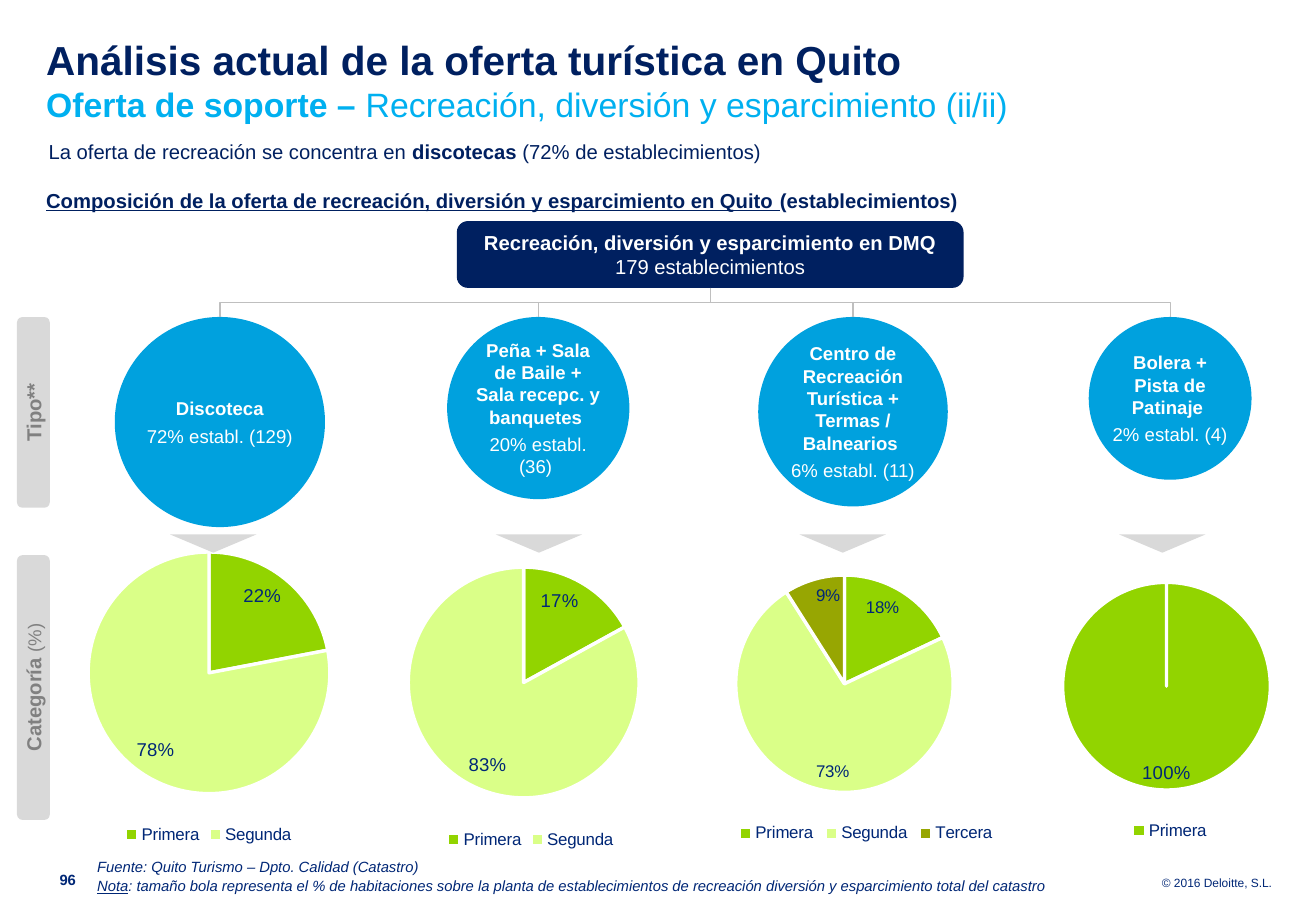
from typing import NamedTuple

from lxml.etree import SubElement
from pptx import Presentation
from pptx.chart.data import CategoryChartData
from pptx.dml.color import RGBColor
from pptx.enum.chart import XL_CHART_TYPE, XL_LABEL_POSITION, XL_LEGEND_POSITION
from pptx.enum.shapes import MSO_CONNECTOR, MSO_SHAPE
from pptx.enum.text import MSO_ANCHOR, PP_ALIGN
from pptx.oxml import parse_xml
from pptx.oxml.ns import nsdecls, qn
from pptx.util import Inches, Pt

NAVY = RGBColor(0x00, 0x20, 0x60)
INK = RGBColor(0x00, 0x27, 0x76)
SKY = RGBColor(0x00, 0xB0, 0xF0)
BALL_BLUE = RGBColor(0x00, 0xA1, 0xDE)
WHITE = RGBColor(0xFF, 0xFF, 0xFF)
PALE_GREY = RGBColor(0xD9, 0xD9, 0xD9)
LINE_GREY = RGBColor(0xBF, 0xBF, 0xBF)
TEXT_GREY = RGBColor(0x80, 0x80, 0x80)
GREENS = [RGBColor(0x92, 0xD4, 0x00), RGBColor(0xDA, 0xFF, 0x88), RGBColor(0x97, 0xA6, 0x02)]
CATEGORIES = ["Primera", "Segunda", "Tercera"]
CELL = Inches(0.1)
BALL_TOP = 26.1
ARROW_TOP = 44


class Box(NamedTuple):
    left: float
    top: float
    width: float
    height: float

    def lengths(self):
        return [round(value * CELL) for value in self]

    def inside(self, left, top, width, height):
        return Box(self.left + left, self.top + top, width, height)


class Offer(NamedTuple):
    chart_box: Box
    ball_center: float
    ball_size: float
    arrow_center: float
    name: str
    share: str
    values: list
    pie: tuple
    label_size: float = 11
    legend: tuple = ()


OFFERS = [
    Offer(Box(1.9, 44, 30.6, 25.9), 16.2, 17.3, 15.65, "Discoteca", "72% establ. (129)",
          [0.22, 0.78], (15.3, 11.4, 19.9)),
    Offer(Box(28.2, 43.6, 31, 26.7), 16.1, 15, 16.15,
          "Peña + Sala de Baile + Sala recepc. y banquetes ", "20% establ. (36) ",
          [0.17, 0.83], (14.9, 12.6, 19)),
    Offer(Box(54.8, 42.6, 30.7, 29.1), 15.4, 15.6, 14.55,
          "Centro de Recreación Turística + Termas / Balnearios ", "6% establ. (11)",
          [0.18, 0.73, 0.09], (14.7, 13.7, 17.9), 10, (5.5, 24.9, 22, 2.2)),
    Offer(Box(81.2, 46, 29.9, 24.3), 15.1, 13.4, 14.45,
          "Bolera + Pista de Patinaje ", "2% establ. (4) ",
          [100], (14.8, 10.5, 17.1), 11, (11.8, 21.4, 6.6, 2)),
]


def apply(target, formats):
    for name, value in formats.items():
        setattr(target, name, value)


def write(frame, paragraphs, style, anchor=MSO_ANCHOR.TOP, **para_format):
    apply(frame, dict(word_wrap=True, vertical_anchor=anchor, margin_left=0,
                      margin_right=0, margin_top=0, margin_bottom=0))
    for index, spans in enumerate(paragraphs):
        para = frame.add_paragraph() if index else frame.paragraphs[0]
        apply(para, para_format)
        for text, changes in spans:
            formats = {**style, **changes}
            color = formats.pop("color")
            formats["size"] = Pt(formats["size"])
            span = para.add_run()
            span.text = text
            apply(span.font, {"name": "Arial", **formats})
            span.font.color.rgb = color


def add_text(page, box, paragraphs, style, **formats):
    write(page.shapes.add_textbox(*box.lengths()).text_frame, paragraphs, style, **formats)


def add_filled(page, kind, box, color):
    shape = page.shapes.add_shape(kind, *box.lengths())
    shape.shadow.inherit = False
    shape.fill.solid()
    shape.fill.fore_color.rgb = color
    shape.line.fill.background()
    return shape


def add_heading(page, box):
    add_text(page, box.inside(0, 0, box.width, 6.9), [
        [("Análisis actual de la oferta turística en Quito", {})],
        [("Oferta de soporte – ", dict(size=20, color=SKY)),
         ("Recreación, diversión y esparcimiento (ii/ii)", dict(size=20, color=SKY, bold=False))],
    ], dict(size=24, color=NAVY, bold=True))
    add_text(page, box.inside(0.2, 8.6, box.width - 0.2, 3), [
        [("La oferta de recreación se concentra en ", {}), ("discotecas", dict(bold=True)),
         (" (72% de establecimientos)", {})],
    ], dict(size=12, color=NAVY), alignment=PP_ALIGN.JUSTIFY)
    add_text(page, box.inside(0, 12.6, box.width, 2.7), [
        [("Composición de la oferta de recreación, diversión y esparcimiento en Quito ",
          dict(underline=True)), ("(establecimientos)", {})],
    ], dict(size=12, color=NAVY, bold=True))


def add_hub(page, box):
    hub = add_filled(page, MSO_SHAPE.ROUNDED_RECTANGLE, box, NAVY)
    write(hub.text_frame, [
        [("Recreación, diversión y esparcimiento en DMQ", dict(bold=True))],
        [("179 establecimientos", {})],
    ], dict(size=12, color=WHITE), MSO_ANCHOR.MIDDLE, alignment=PP_ALIGN.CENTER)
    return hub


def add_side_tab(page, box, spans):
    turned = box.inside((box.width - box.height) / 2, (box.height - box.width) / 2,
                        box.height, box.width)
    tab = add_filled(page, MSO_SHAPE.ROUNDED_RECTANGLE, turned, PALE_GREY)
    tab.rotation = 270
    write(tab.text_frame, [spans], dict(size=12, color=TEXT_GREY), MSO_ANCHOR.MIDDLE,
          alignment=PP_ALIGN.CENTER)


def join_to_hub(page, hub, ball):
    start_x, start_y = hub.left + hub.width // 2, hub.top + hub.height
    end_x, end_y = ball.left + ball.width // 2, ball.top
    line = page.shapes.add_connector(MSO_CONNECTOR.ELBOW, start_x, start_y, end_x, end_y)
    line.begin_connect(hub, 2)
    line.end_connect(ball, 0)
    drop, span = end_y - start_y, abs(end_x - start_x)
    apply(line, dict(left=(start_x + end_x - drop) // 2, top=(start_y + end_y - span) // 2,
                     width=drop, height=span))
    rightward = end_x > start_x
    apply(line.element.spPr.xfrm, dict(rot=270 if rightward else 90, flipH=rightward, flipV=False))
    line.line.color.rgb = LINE_GREY
    line.line.width = Pt(0.75)
    SubElement(line.element.spPr, qn("a:effectLst"))


def set_layout(parent, index, box, area, inner=False):
    for old in parent.findall(qn("c:layout")):
        parent.remove(old)
    layout = parse_xml(f"<c:layout {nsdecls('c')}><c:manualLayout/></c:layout>")
    left, top, width, height = box
    entries = [("layoutTarget", "inner")] if inner else []
    entries += [("xMode", "edge"), ("yMode", "edge"),
                ("x", left / area.width), ("y", top / area.height),
                ("w", width / area.width), ("h", height / area.height)]
    for name, value in entries:
        SubElement(layout[0], qn(f"c:{name}")).set("val", str(value))
    parent.insert(index, layout)


def add_pie(page, box, offer):
    data = CategoryChartData()
    data.categories = CATEGORIES[:len(offer.values)]
    data.add_series("Series 1", offer.values)
    chart = page.shapes.add_chart(XL_CHART_TYPE.PIE, *box.lengths(), data).chart
    apply(chart, dict(has_title=False, has_legend=True))
    apply(chart.font, dict(size=Pt(10), name="Arial"))
    chart.font.color.rgb = INK
    apply(chart.legend, dict(position=XL_LEGEND_POSITION.BOTTOM, include_in_layout=False))
    space = chart.element
    space.find(qn("c:chart")).addnext(parse_xml(
        f"<c:spPr {nsdecls('c', 'a')}><a:noFill/><a:ln><a:noFill/></a:ln></c:spPr>"))
    center_x, center_y, size = offer.pie
    set_layout(next(space.iter(qn("c:plotArea"))), 0,
               (center_x - size / 2, center_y - size / 2, size, size), box, True)
    if offer.legend:
        set_layout(next(space.iter(qn("c:legend"))), 1, offer.legend, box)
    plot = chart.plots[0]
    apply(plot, dict(vary_by_categories=True, has_data_labels=True))
    whole = len(offer.values) == 1
    apply(plot.data_labels, dict(show_value=not whole, show_percentage=whole, number_format="0%",
                                 number_format_is_linked=False,
                                 position=XL_LABEL_POSITION.INSIDE_END))
    apply(plot.data_labels.font, dict(size=Pt(offer.label_size), bold=False, name="Arial"))
    plot.data_labels.font.color.rgb = INK
    for index, color in enumerate(GREENS[:len(offer.values)]):
        slice_format = plot.series[0].points[index].format
        slice_format.fill.solid()
        slice_format.fill.fore_color.rgb = color
        slice_format.line.color.rgb = WHITE
        slice_format.line.width = Pt(2)


def add_offer(page, box, offer, hub):
    add_pie(page, box, offer)
    size = offer.ball_size
    ball = add_filled(page, MSO_SHAPE.OVAL, Box(
        box.left + offer.ball_center - size / 2, BALL_TOP, size, size), BALL_BLUE)
    write(ball.text_frame, [[(offer.name, dict(bold=True))], [(offer.share, {})]],
          dict(size=11, color=WHITE), MSO_ANCHOR.MIDDLE,
          alignment=PP_ALIGN.CENTER, space_after=Pt(3))
    arrow = add_filled(page, MSO_SHAPE.ISOSCELES_TRIANGLE, Box(
        box.left + offer.arrow_center - 3.55, ARROW_TOP, 7.1, 1.5), PALE_GREY)
    arrow.rotation = 180
    join_to_hub(page, hub, ball)


def add_footer(page, box):
    style = dict(size=8.8, color=INK)
    spacing = dict(line_spacing=Pt(10.6))
    add_text(page, box.inside(0, 1.1, 3.4, 1.6), [[("96", dict(bold=True))]], style, **spacing)
    add_text(page, box.inside(3.1, 0, 39.4, 1.6), [
        [("Fuente: Quito Turismo – Dpto. Calidad (Catastro)", dict(italic=True))],
    ], style, **spacing)
    add_text(page, box.inside(3.1, 1.6, 81.8, 2.1), [
        [("Nota", dict(underline=True)),
         (": tamaño bola representa el % de habitaciones sobre la planta de establecimientos "
          "de recreación diversión y esparcimiento total del catastro", {})],
    ], dict(style, italic=True), **spacing)
    add_text(page, box.inside(box.width - 19.5, 1.5, 19.5, 1.2), [
        [("© 2016 Deloitte, S.L.", {})],
    ], dict(size=7.1, color=INK), anchor=MSO_ANCHOR.BOTTOM, alignment=PP_ALIGN.RIGHT)


def main():
    deck = Presentation()
    apply(deck, dict(slide_width=Inches(10.83), slide_height=Inches(7.5)))
    page = deck.slides.add_slide(deck.slide_layouts[6])
    add_heading(page, Box(3.8, 2.9, 100.8, 15.3))
    hub = add_hub(page, Box(37.6, 18.2, 41.7, 5.5))
    for offer in OFFERS:
        add_offer(page, offer.chart_box, offer, hub)
    add_side_tab(page, Box(1.4, BALL_TOP, 2.7, 15.7), [("Tipo**", dict(bold=True))])
    add_side_tab(page, Box(1.4, 45.7, 2.7, 21.8),
                 [("Categoría ", dict(bold=True)), ("(%)", dict(size=11))])
    add_footer(page, Box(4.9, 70.6, 99.8, 3.7))
    deck.save("out.pptx")


if __name__ == "__main__":
    main()
